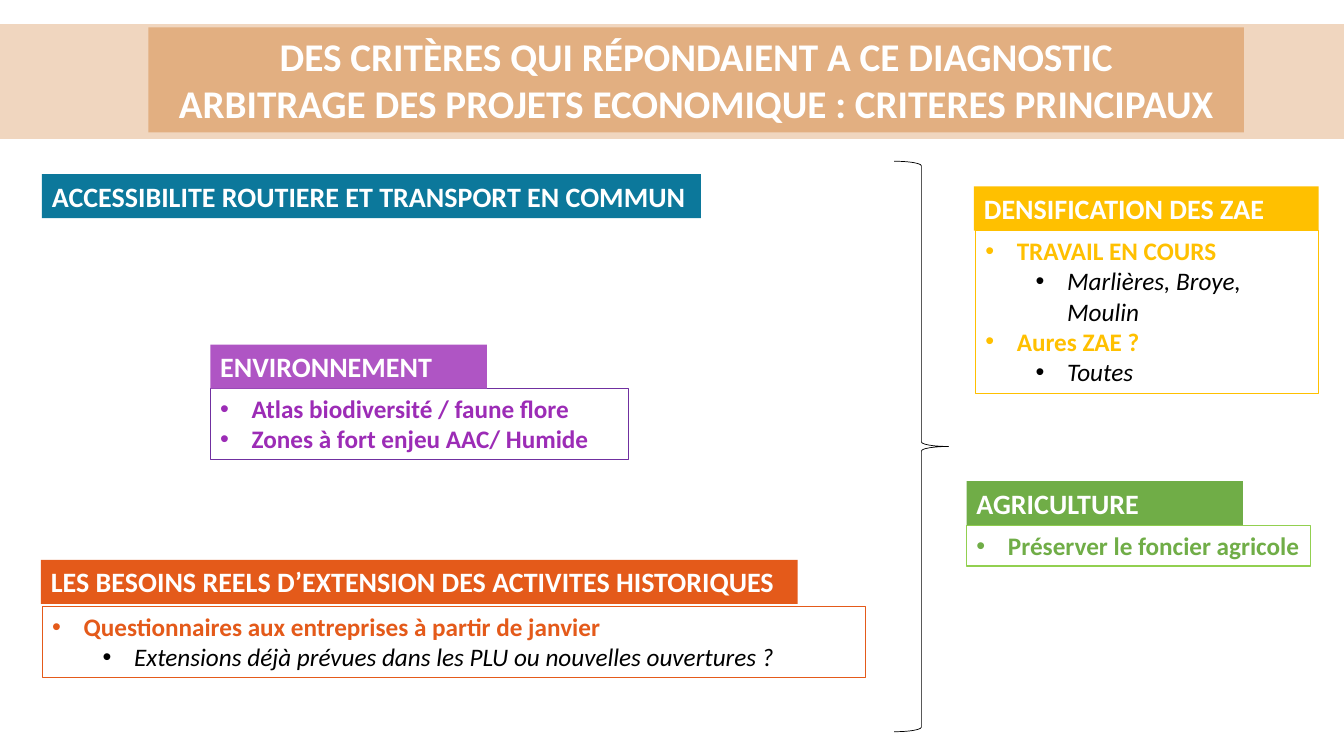
"""Build the slide of criteria for arbitrating economic projects."""
from lxml.etree import SubElement
from pptx import Presentation
from pptx.dml.color import RGBColor
from pptx.enum.shapes import MSO_SHAPE as Preset
from pptx.enum.text import MSO_ANCHOR as Anchor, MSO_AUTO_SIZE as AutoSize, PP_ALIGN as Align
from pptx.oxml.ns import qn
from pptx.util import Pt

WHITE = RGBColor(0xFF, 0xFF, 0xFF)
BLACK = RGBColor(0x00, 0x00, 0x00)
SAND = RGBColor(0xE2, 0xAF, 0x81)
BLUE = RGBColor(0x0C, 0x78, 0x9B)
ORANGE = RGBColor(0xE4, 0x5A, 0x1A)
YELLOW = RGBColor(0xFF, 0xC0, 0x00)
LILAC = RGBColor(0xAF, 0x55, 0xC4)
VIOLET = RGBColor(0x9C, 0x2C, 0xB6)
PURPLE = RGBColor(0x70, 0x30, 0xA0)
GREEN = RGBColor(0x70, 0xAD, 0x47)
LIME = RGBColor(0x92, 0xD0, 0x50)

HEADING = [
    "DES CRITÈRES QUI RÉPONDAIENT A CE DIAGNOSTIC",
    "ARBITRAGE DES PROJETS ECONOMIQUE : CRITERES PRINCIPAUX",
]
HEADING_AT = (106, 19.5, 782.5, 75)
BAND_AT = (0, 17.3, 960, 82)
BRACE_AT = (638.7, 115.2, 38.9, 407.5)

CRITERIA = [
    dict(label="ACCESSIBILITE ROUTIERE ET TRANSPORT EN COMMUN",
         at=(30, 124.4, 470.7), color=BLUE),
    dict(label="LES BESOINS REELS D’EXTENSION DES ACTIVITES HISTORIQUES",
         at=(29.3, 399.9, 540.5), color=ORANGE,
         box=(30.2, 433, 588.2), lines=2, outline=ORANGE, ink=ORANGE,
         points=[(0, "Questionnaires aux entreprises à partir de janvier"),
                 (1, "Extensions déjà prévues dans les PLU ou nouvelles ouvertures ?")]),
    dict(label="DENSIFICATION DES ZAE",
         at=(695.7, 133.2, 246.2), color=YELLOW,
         box=(696.7, 164.6, 245.2), lines=5, outline=YELLOW, ink=YELLOW,
         points=[(0, "TRAVAIL EN COURS"), (1, "Marlières, Broye, Moulin"),
                 (0, "Aures ZAE ?"), (1, "Toutes")]),
    dict(label="ENVIRONNEMENT",
         at=(150.2, 246.2, 197.6), color=LILAC,
         box=(150.2, 277.3, 298.5), lines=2, outline=PURPLE, ink=VIOLET,
         points=[(0, "Atlas biodiversité / faune flore"),
                 (0, "Zones à fort enjeu AAC/ Humide")]),
    dict(label="AGRICULTURE",
         at=(690.4, 343.7, 197.4), color=GREEN,
         box=(690.4, 375.2, 245.5), lines=1, outline=LIME, ink=GREEN,
         points=[(0, "Préserver le foncier agricole")]),
]

LABEL_HEIGHT = 31.5
POINT_LINE = 21.9
PADDING = 7.2
HANGING = 22.5
LEVEL_STEP = 36


def apply(target, values):
    for name, value in values.items():
        setattr(target, name, value)


def add_part(slide, preset, at, fill=None, outline=None, weight=0.75):
    part = slide.shapes.add_shape(preset, *map(Pt, at))
    part.shadow.inherit = False
    if fill is None:
        part.fill.background()
    else:
        part.fill.solid()
        part.fill.fore_color.rgb = fill
    if outline is None:
        part.line.fill.background()
    else:
        part.line.color.rgb = outline
        part.line.width = Pt(weight)
    return part


def write(part, rows, size, align=Align.LEFT):
    """Fill a part with (text, color, italic, level) rows; level None means no bullet."""
    frame = part.text_frame
    apply(frame, dict(word_wrap=True, auto_size=AutoSize.NONE,
                      vertical_anchor=Anchor.TOP,
                      margin_left=Pt(7.2), margin_right=Pt(7.2),
                      margin_top=Pt(3.6), margin_bottom=Pt(3.6)))
    for index, (text, color, italic, level) in enumerate(rows):
        paragraph = frame.add_paragraph() if index else frame.paragraphs[0]
        apply(paragraph, dict(alignment=align, level=level or 0))
        run = paragraph.add_run()
        run.text = text
        apply(run.font, dict(name="Calibri", size=Pt(size), bold=not italic, italic=italic))
        run.font.color.rgb = color
        if level is not None:
            properties = paragraph._p.get_or_add_pPr()
            properties.set("marL", str(Pt(HANGING + level * LEVEL_STEP)))
            properties.set("indent", str(-Pt(HANGING)))
            SubElement(properties, qn("a:buFont"), typeface="Arial")
            SubElement(properties, qn("a:buChar"), char="•")


def add_heading(slide):
    band = add_part(slide, Preset.RECTANGLE, BAND_AT, SAND)
    tint = band.fill._xPr.find(qn("a:solidFill"))[0]
    SubElement(tint, qn("a:alpha"), val="50000")
    title = slide.shapes.title
    title.element.addprevious(band.element)
    apply(title, dict(zip(("left", "top", "width", "height"), map(Pt, HEADING_AT))))
    title.fill.solid()
    title.fill.fore_color.rgb = SAND
    write(title, [(line, WHITE, False, None) for line in HEADING], 28, Align.CENTER)


def add_criterion(slide, criterion):
    if "box" in criterion:
        height = PADDING + criterion["lines"] * POINT_LINE
        box = add_part(slide, Preset.RECTANGLE, (*criterion["box"], height),
                       WHITE, criterion["outline"])
        write(box, [(text, BLACK if level else criterion["ink"], bool(level), level)
                    for level, text in criterion["points"]], 18)
    label = add_part(slide, Preset.RECTANGLE, (*criterion["at"], LABEL_HEIGHT),
                     criterion["color"])
    write(label, [(criterion["label"], WHITE, False, None)], 20)


def main():
    deck = Presentation()
    apply(deck, dict(slide_width=Pt(960), slide_height=Pt(540)))
    slide = deck.slides.add_slide(deck.slide_layouts[5])
    add_heading(slide)
    for criterion in CRITERIA:
        add_criterion(slide, criterion)
    add_part(slide, Preset.RIGHT_BRACE, BRACE_AT, outline=BLACK, weight=0.5)
    deck.save("out.pptx")


if __name__ == "__main__":
    main()
